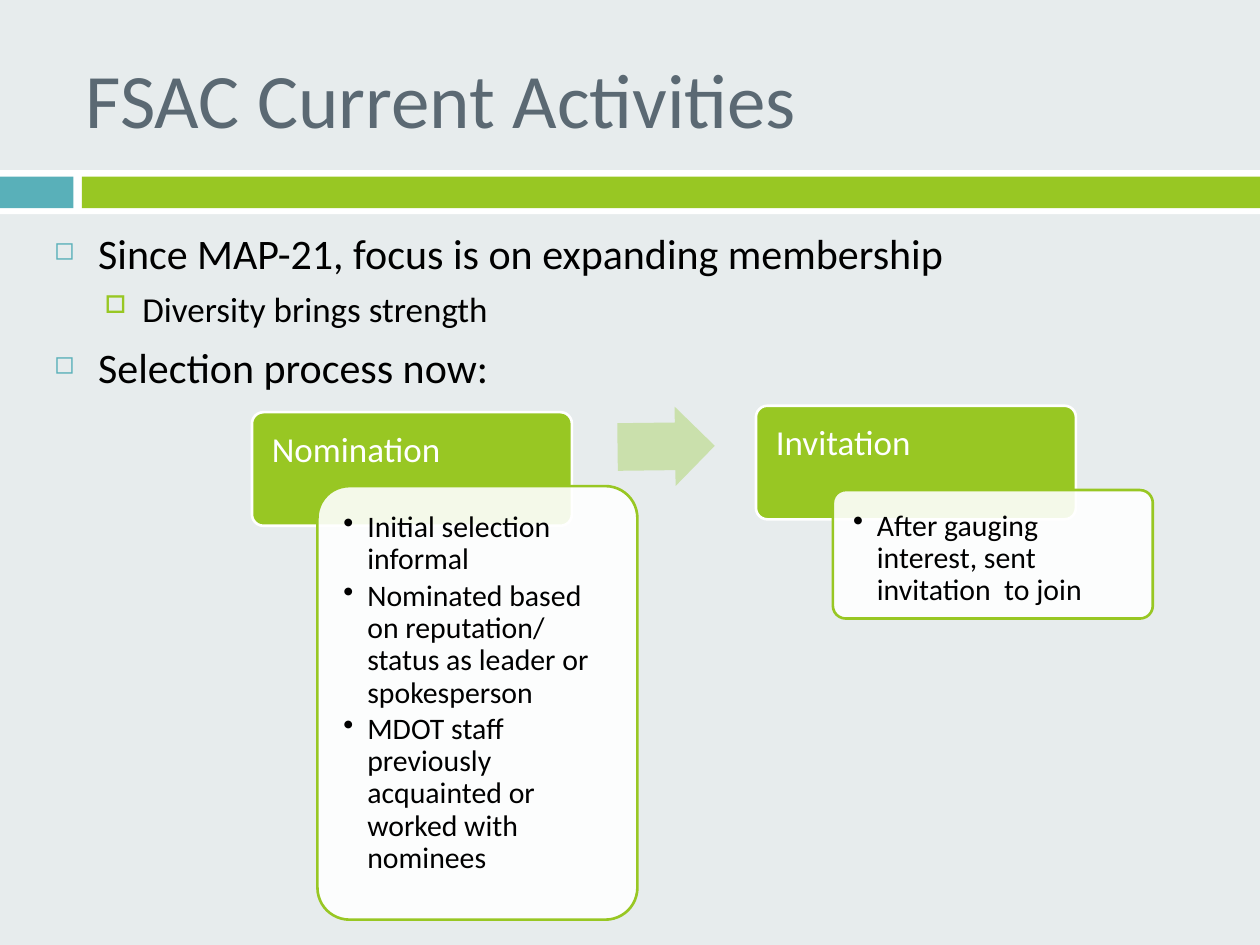
from lxml import etree
from pptx import Presentation
from pptx.dml.color import RGBColor
from pptx.enum.shapes import MSO_SHAPE
from pptx.enum.text import MSO_ANCHOR, PP_ALIGN
from pptx.oxml.ns import qn
from pptx.util import Cm, Pt

RECTANGLE = MSO_SHAPE.RECTANGLE
ROUNDED = MSO_SHAPE.ROUNDED_RECTANGLE
ARROW = MSO_SHAPE.RIGHT_ARROW
TOP, MIDDLE = MSO_ANCHOR.TOP, MSO_ANCHOR.MIDDLE
LEFT = PP_ALIGN.LEFT

WHITE, BLACK, SLATE = "FFFFFF", "000000", "5B6973"
MIST, TEAL, GREEN, PALE_GREEN = "E7ECED", "59B0B9", "98C723", "CAE0AC"
CARD_WIDTH, HEADER_HEIGHT, LABEL_HEIGHT = 6.45, 2.29, 1.52
CORNER = 0.1

OUTLINE = [
    (0, "Since MAP-21, focus is on expanding membership"),
    (1, "Diversity brings strength"),
    (0, "Selection process now:"),
]
OUTLINE_LEVELS = [
    dict(size=24, before=7, margin=0.89, hanging=0.89, bullet=("◻", TEAL, 60)),
    dict(size=20, before=5.5, margin=1.78, hanging=0.76, bullet=("□", GREEN, 70)),
]
STEPS = [
    ("Nomination", (5.08, 8.31), (6.4, 9.8, CARD_WIDTH, 8.74), [
        "Initial selection informal",
        "Nominated based on reputation/ status as leader or spokesperson",
        "MDOT staff previously acquainted or worked with nominees",
    ]),
    ("Invitation", (15.24, 8.18), (16.79, 9.88, CARD_WIDTH, 2.59), [
        "After gauging interest, sent invitation  to join",
    ]),
]


def rgb(value):
    return RGBColor.from_string(value)


class SlideBuilder:
    """Draws styled elements on the current slide."""

    def __init__(self, slide, font="Calibri"):
        self.slide = slide
        self.font = font

    def background(self, color):
        fill = self.slide.background.fill
        fill.solid()
        fill.fore_color.rgb = rgb(color)

    def shape(self, kind, place, color, line=None, opacity=None, adjustments=()):
        shape = self.slide.shapes.add_shape(kind, *map(Cm, place))
        shape.shadow.inherit = False
        shape.fill.solid()
        shape.fill.fore_color.rgb = rgb(color)
        if opacity is not None:
            tint = shape._element.spPr.find(f"{qn('a:solidFill')}/{qn('a:srgbClr')}")
            etree.SubElement(tint, qn("a:alpha"), val=str(opacity * 1000))
        if line:
            shape.line.color.rgb = rgb(line)
            shape.line.width = Pt(1.5)
        else:
            shape.line.fill.background()
        for index, value in enumerate(adjustments):
            shape.adjustments[index] = value
        return shape

    def text_box(self, place, anchor=TOP, insets=(0.25, 0.13, 0.25, 0.13)):
        frame = self.slide.shapes.add_textbox(*map(Cm, place)).text_frame
        frame.word_wrap = True
        frame.vertical_anchor = anchor
        (frame.margin_left, frame.margin_top,
         frame.margin_right, frame.margin_bottom) = map(Cm, insets)
        return frame

    def style_paragraph(self, para, size, color, before=0, after=0, spacing=1.0,
                        margin=0, hanging=0, bullet=None):
        para.alignment = LEFT
        para.line_spacing = spacing
        para.space_before, para.space_after = Pt(before), Pt(after)
        for span in para.runs:
            span.font.name = self.font
            span.font.size = Pt(size)
            span.font.color.rgb = rgb(color)
        if bullet:
            self.bullet(para, margin, hanging, *bullet)

    def bullet(self, para, margin, hanging, mark, color, percent):
        properties = para._p.get_or_add_pPr()
        properties.set("marL", str(Cm(margin)))
        properties.set("indent", str(-Cm(hanging)))
        tint = etree.SubElement(properties, qn("a:buClr"))
        etree.SubElement(tint, qn("a:srgbClr"), val=color)
        etree.SubElement(properties, qn("a:buSzPct"), val=str(percent * 1000))
        etree.SubElement(properties, qn("a:buChar"), char=mark)

    def title(self, place, text):
        frame = self.text_box(place, MIDDLE)
        frame.text = text
        self.style_paragraph(frame.paragraphs[0], 44, SLATE)

    def outline(self, place, items):
        frame = self.text_box(place)
        frame.text = "\n".join(text for _, text in items)
        for para, (level, _) in zip(frame.paragraphs, items):
            para.level = level
            self.style_paragraph(para, color=BLACK, **OUTLINE_LEVELS[level])

    def step_header(self, corner, text):
        self.shape(ROUNDED, (*corner, CARD_WIDTH, HEADER_HEIGHT), GREEN, WHITE,
                   adjustments=[CORNER])
        frame = self.text_box((*corner, CARD_WIDTH, LABEL_HEIGHT),
                              insets=(0.4, 0.4, 0.4, 0.2))
        frame.text = text
        self.style_paragraph(frame.paragraphs[0], 20, WHITE, after=7, spacing=0.9)

    def step_details(self, place, items):
        self.shape(ROUNDED, place, WHITE, GREEN, 90, [CORNER])
        left, top, width, height = place
        inset = 0.3 * CORNER * min(width, height)
        frame = self.text_box((left + inset, top + inset,
                               width - 2 * inset, height - 2 * inset),
                              insets=[0.33] * 4)
        frame.text = "\n".join(items)
        for para in frame.paragraphs:
            self.style_paragraph(para, 17, BLACK, after=2.55, spacing=0.9,
                                 margin=0.48, hanging=0.48,
                                 bullet=("•", BLACK, 100))


def main():
    deck = Presentation()
    deck.slide_width, deck.slide_height = Cm(25.4), Cm(19.05)
    page = SlideBuilder(deck.slides.add_slide(deck.slide_layouts[6]))

    page.background(MIST)
    page.shape(RECTANGLE, (0, 3.43, 25.4, 0.89), WHITE)
    page.shape(RECTANGLE, (0, 3.56, 1.48, 0.64), TEAL)
    page.shape(RECTANGLE, (1.65, 3.56, 23.75, 0.64), GREEN)
    page.title((1.48, 0.76, 22.66, 2.41), "FSAC Current Activities")
    page.outline((0.84, 4.45, 23.93, 4.65), OUTLINE)

    for name, corner, details, items in STEPS:
        page.step_header(corner, name)
        page.step_details(details, items)
    arrow = page.shape(ARROW, (12.45, 8.2, 1.96, 1.6), PALE_GREEN,
                       adjustments=[0.6, 0.5])
    arrow.rotation = 359.3

    deck.save("out.pptx")


if __name__ == "__main__":
    main()
